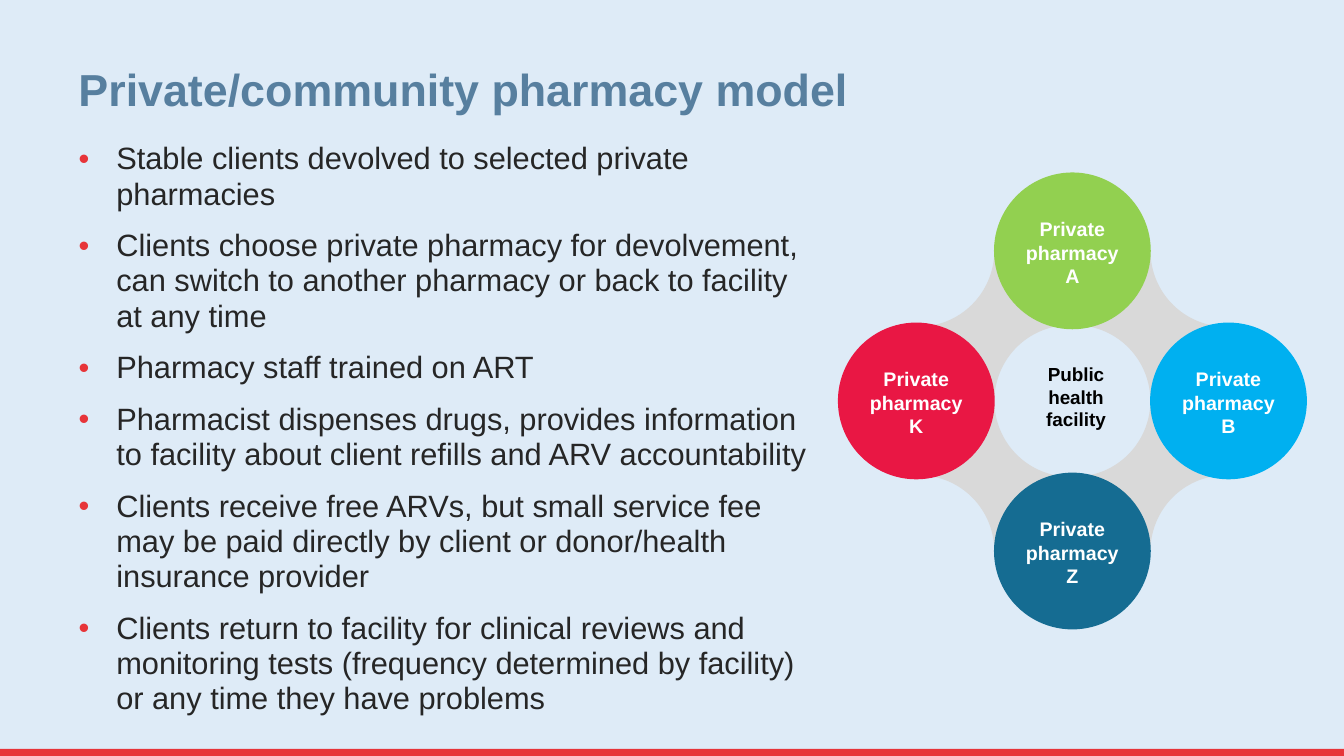
from pptx import Presentation
from pptx.dml.color import RGBColor
from pptx.enum.shapes import MSO_SHAPE
from pptx.enum.text import MSO_ANCHOR, PP_ALIGN
from pptx.oxml.ns import qn
from pptx.util import Pt
from lxml import etree

RECT, OVAL = MSO_SHAPE.RECTANGLE, MSO_SHAPE.OVAL
TOP, BOTTOM = MSO_ANCHOR.TOP, MSO_ANCHOR.BOTTOM
LEFT, CENTER = PP_ALIGN.LEFT, PP_ALIGN.CENTER

# Content
TITLE = "Private/community pharmacy model"
POINTS = [
    "Stable clients devolved to selected private pharmacies",
    "Clients choose private pharmacy for devolvement, can switch to another pharmacy or back to facility at any time",
    "Pharmacy staff trained on ART",
    "Pharmacist dispenses drugs, provides information to facility about client refills and ARV accountability",
    "Clients receive free ARVs, but small service fee may be paid directly by client or donor/health insurance provider",
    "Clients return to facility for clinical reviews and monitoring tests (frequency determined by facility) "
    "or any time they have problems",
]
HUB = "Public health facility"
# Label, colour key, direction from the hub
PHARMACIES = [
    ("Private pharmacy A", "green", (0, -1)),
    ("Private pharmacy K", "crimson", (-1, 0)),
    ("Private pharmacy Z", "teal", (0, 1)),
    ("Private pharmacy B", "sky", (1, 0)),
]
COLORS = {
    "background": "DEEBF7", "red": "E73439", "title": "577F9F", "body": "262626",
    "link": "D9D9D9", "green": "92D050", "crimson": "E91744", "teal": "156C92",
    "sky": "00B0F0", "white": "FFFFFF", "black": "000000",
}

# Layout, in points
WIDTH, HEIGHT = 960, 540
BAR_TOP, BAR_HEIGHT = 535, 5.5
HUB_X, HUB_Y = 766, 286.4
STEP_X, STEP_Y = 111.5, 107.2
DIAMETER = 112
LINK_W, LINK_H = 46.5, 54
# One side of a link, from its left tip to its bottom tip, in half widths and heights
LINK_SIDE = [(-1, 0), (-0.43, 0.07), (0, 0.49), (0, 1)]


def rgb(key):
    return RGBColor.from_string(COLORS[key])


def paint(shape, color):
    shape.fill.solid()
    shape.fill.fore_color.rgb = rgb(color)
    shape.line.fill.background()
    shape.shadow.inherit = False
    return shape


def add_bullet(paragraph, color, indent):
    props = paragraph._p.get_or_add_pPr()
    props.set("marL", str(Pt(indent)))
    props.set("indent", str(-Pt(indent)))
    bullet_color = etree.SubElement(props, qn("a:buClr"))
    etree.SubElement(bullet_color, qn("a:srgbClr")).set("val", COLORS[color])
    etree.SubElement(props, qn("a:buFont")).set("typeface", "Arial")
    etree.SubElement(props, qn("a:buChar")).set("char", "•")


def write(shape, lines, size, color, bold=False, align=LEFT, anchor=TOP,
          margins=(7.2, 3.6, 7.2, 3.6), spacing=1.0, gap=0, bullet=None):
    frame = shape.text_frame
    frame.word_wrap = True
    frame.vertical_anchor = anchor
    (frame.margin_left, frame.margin_top,
     frame.margin_right, frame.margin_bottom) = map(Pt, margins)
    for i, line in enumerate(lines):
        paragraph = frame.add_paragraph() if i else frame.paragraphs[0]
        if bullet:
            add_bullet(paragraph, bullet, 27)
        paragraph.alignment = align
        paragraph.line_spacing = spacing
        paragraph.space_before = Pt(gap if i else 0)
        run = paragraph.add_run()
        run.text = line
        run.font.name = "Arial"
        run.font.size = Pt(size)
        run.font.bold = bold
        run.font.color.rgb = rgb(color)


def add_link(shapes, cx, cy):
    """Four-pointed star whose concave sides mirror one cubic curve."""
    half = LINK_SIDE + [(-x, y) for x, y in LINK_SIDE[-2::-1]]
    star = half + [(x, -y) for x, y in half[-2::-1]]
    start, *rest = [(Pt(cx + x * LINK_W), Pt(cy + y * LINK_H)) for x, y in star]
    builder = shapes.build_freeform(*start)
    builder.add_line_segments(rest, close=True)
    link = paint(builder.convert_to_shape(), "link")
    # Turn every three line segments into one cubic curve
    segments = list(link._element.iter(qn("a:lnTo")))
    for i in range(0, len(segments), 3):
        curve = etree.Element(qn("a:cubicBezTo"))
        segments[i].addprevious(curve)
        for segment in segments[i:i + 3]:
            curve.append(segment[0])
            segment.getparent().remove(segment)


def main():
    prs = Presentation()
    prs.slide_width, prs.slide_height = Pt(WIDTH), Pt(HEIGHT)
    slide = prs.slides.add_slide(prs.slide_layouts[6])
    shapes = slide.shapes

    # Background panel and bottom bar
    for color, top, height in (("background", 0, HEIGHT), ("red", BAR_TOP, BAR_HEIGHT)):
        paint(shapes.add_shape(RECT, 0, Pt(top), Pt(WIDTH), Pt(height)), color)

    # Title and bullet points
    title = shapes.add_textbox(Pt(49), Pt(24), Pt(828), Pt(62.5))
    write(title, [TITLE], size=32, color="title", bold=True, anchor=BOTTOM, spacing=0.9)
    points = shapes.add_textbox(Pt(49), Pt(97.8), Pt(541.5), Pt(426))
    write(points, POINTS, size=22, color="body", spacing=0.95, gap=12, bullet="red")

    # Grey links between neighbouring pharmacies
    for side_x in (-1, 1):
        for side_y in (-1, 1):
            add_link(shapes, HUB_X + side_x * STEP_X / 2, HUB_Y + side_y * STEP_Y / 2)

    # Pharmacies around the hub
    for label, color, (dx, dy) in PHARMACIES:
        left = HUB_X + dx * STEP_X - DIAMETER / 2
        top = HUB_Y + dy * STEP_Y - DIAMETER / 2
        pharmacy = paint(shapes.add_shape(OVAL, Pt(left), Pt(top), Pt(DIAMETER), Pt(DIAMETER)), color)
        write(pharmacy, [label], size=14, color="white", bold=True, align=CENTER,
              margins=(5, 15.5, 5, 3))

    # Hub label
    hub = shapes.add_textbox(Pt(735.1), Pt(255.6), Pt(67), Pt(56))
    write(hub, [HUB], size=13.5, color="black", bold=True, align=CENTER)

    prs.save("out.pptx")


if __name__ == "__main__":
    main()
